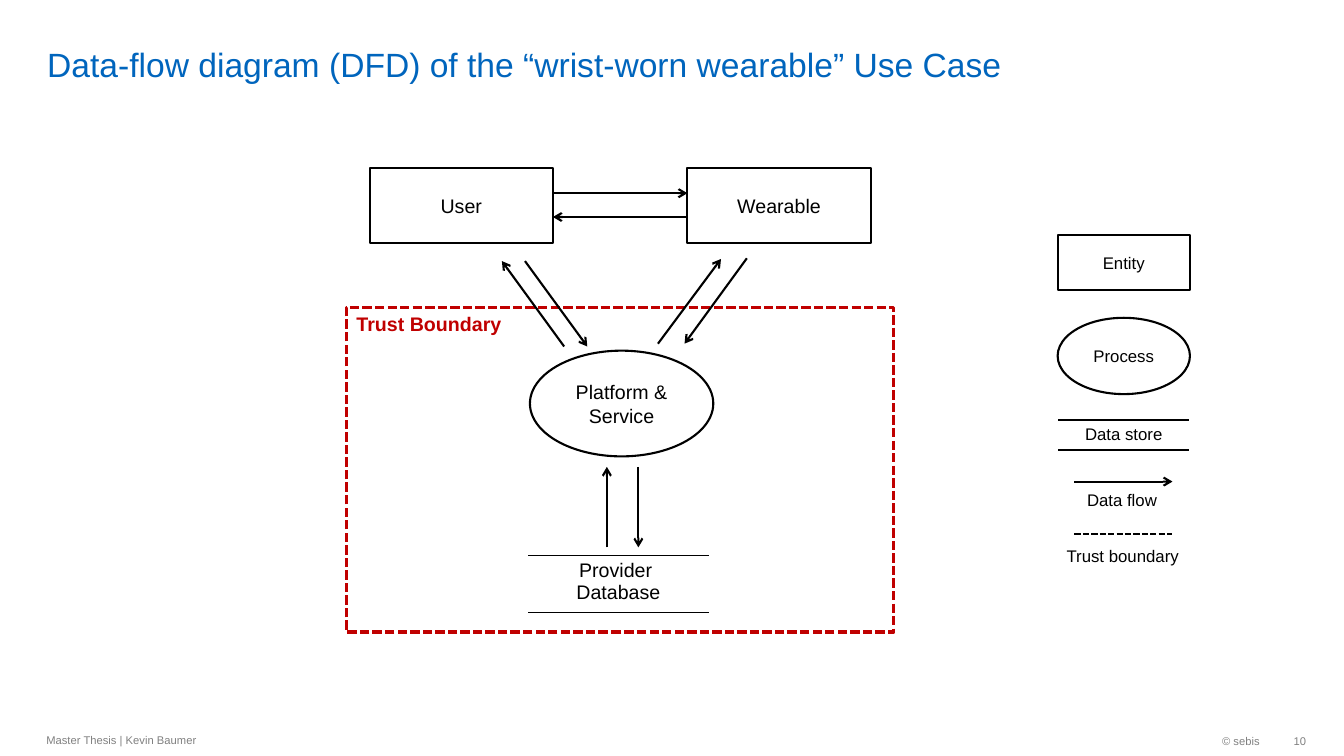
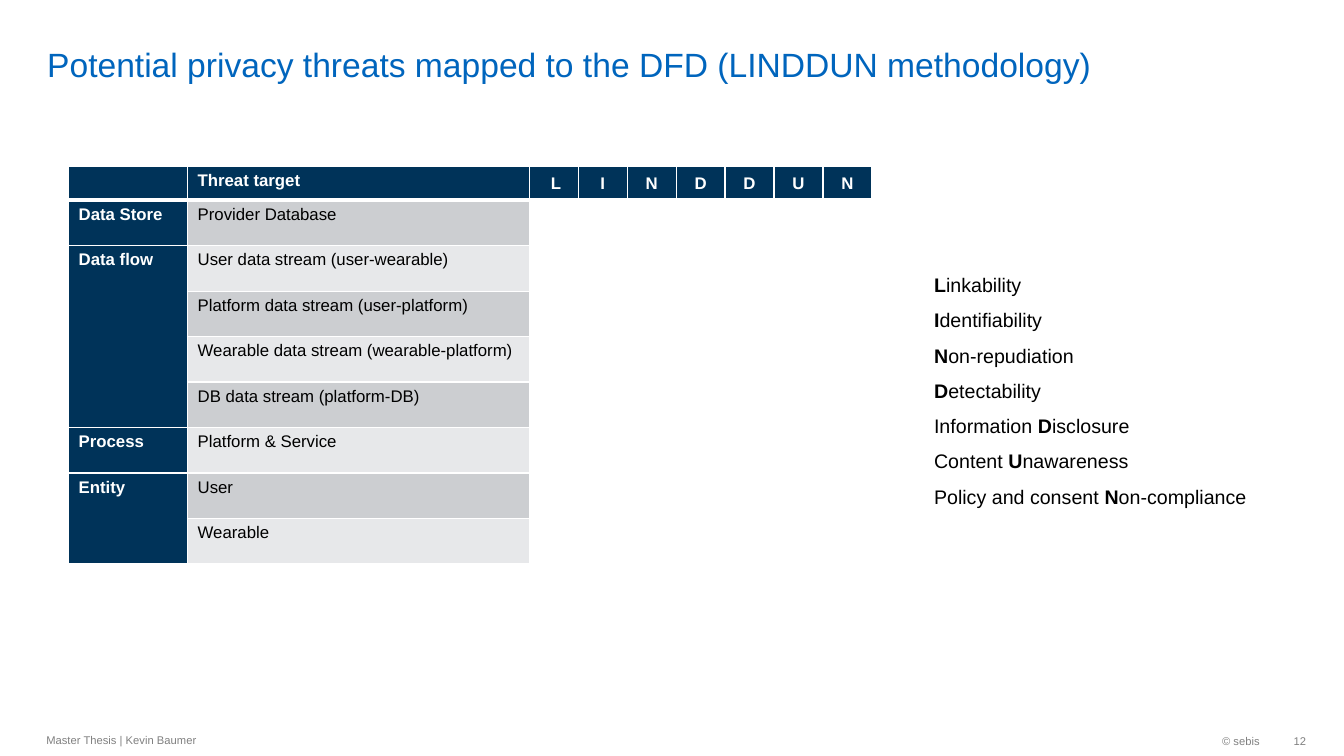
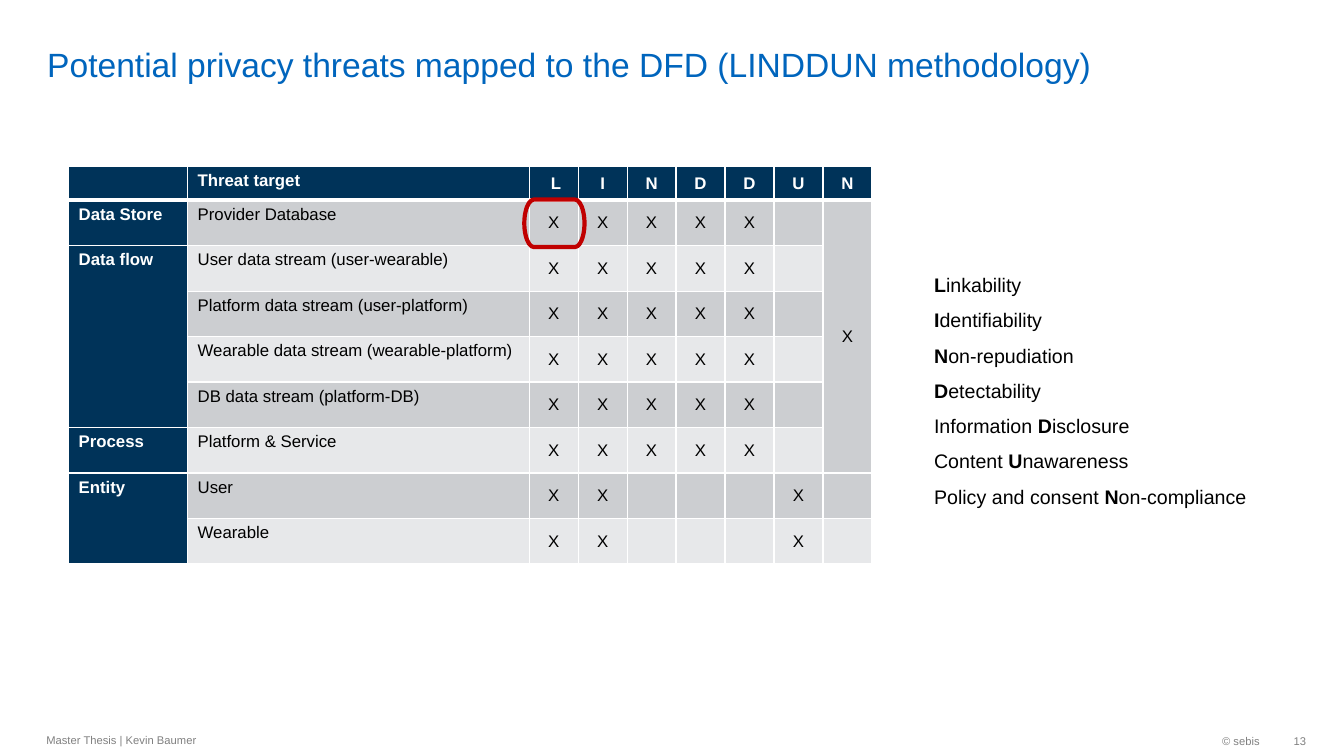
from dataclasses import dataclass

from lxml.etree import SubElement as Sub
from pptx import Presentation
from pptx.dml.color import RGBColor as RGB
from pptx.enum.dml import MSO_LINE as Dash
from pptx.enum.shapes import MSO_CONNECTOR as Conn, MSO_SHAPE as Kind
from pptx.enum.text import MSO_ANCHOR as Anchor, MSO_AUTO_SIZE as Auto, PP_ALIGN as Align
from pptx.oxml.ns import qn
from pptx.util import Emu, Pt


@dataclass(frozen=True)
class Theme:
    """Colours, type sizes and line widths."""
    font: str = "Arial"
    blue: str = "0065BD"
    navy: str = "003359"
    red: str = "C00000"
    black: str = "000000"
    white: str = "FFFFFF"
    grey: str = "808080"
    bands: tuple = ("CCCED1", "E7E8EA")
    head: int = 24
    body: int = 14
    small: int = 12
    foot: int = 8
    thin: float = 1
    line: float = 1.5
    dash: float = 2.25
    bold: float = 3


def px(num):
    """Turn px, 144 to the inch, into EMU."""
    return Emu(num * 6350)


def put(item, vals):
    """Set attributes from a dict."""
    for key, val in vals.items():
        setattr(item, key, val)


def tint(fill, color):
    """Make a fill solid, or empty without a colour."""
    if color:
        fill.solid()
        fill.fore_color.rgb = RGB.from_string(color)
    else:
        fill.background()


class Deck:
    """Holds the style and the current slide."""

    def __init__(self, theme):
        """Open an empty wide deck."""
        self.theme = theme
        self.show = Presentation()
        put(self.show, {"slide_width": px(1920), "slide_height": px(1080)})

    def page(self, title, num, layout):
        """Add a slide with its title and footer."""
        th = self.theme
        self.slide = self.show.slides.add_slide(self.show.slide_layouts[layout])
        name = self.slide.shapes.title
        self.place(name, (53, 7, 1668, 114))
        put(name.text_frame, {"margin_top": 0, "margin_bottom": 0})
        self.label(name.text_frame, [title], th.head, th.blue, anchor=Anchor.BOTTOM)
        foot = {"size": th.foot, "color": th.grey, "anchor": Anchor.MIDDLE}
        self.text("Master Thesis | Kevin Baumer", (52, 1034, 907, 46), **foot)
        self.text("© sebis", (1477, 1035, 337, 46), align=Align.RIGHT, **foot)
        page = self.text(str(num), (1814, 1035, 52, 46), align=Align.RIGHT, **foot)
        page.margin_right = 0

    def place(self, item, box):
        """Move and size a shape."""
        put(item, dict(zip(("left", "top", "width", "height"), map(px, box))))

    def label(self, frame, lines, size, color, bold=False, align=Align.LEFT, anchor=None):
        """Fill a frame; stars switch bold on and off."""
        if anchor is not None:
            put(frame, {"word_wrap": True, "auto_size": Auto.NONE, "vertical_anchor": anchor})
        for i, line in enumerate(lines):
            para = frame.add_paragraph() if i else frame.paragraphs[0]
            para.alignment = align
            if not line:
                Sub(para._p, qn("a:endParaRPr"), sz=str(size * 100))
            for j, row in enumerate(line.split("\v")):
                if j:
                    para.add_line_break()
                for k, part in enumerate(row.split("*")):
                    if part:
                        run = para.add_run()
                        run.text = part
                        put(run.font, {"name": self.theme.font, "size": Pt(size),
                                       "bold": bold or k % 2 == 1})
                        run.font.color.rgb = RGB.from_string(color)

    def text(self, text, box, size, color, **form):
        """Add a text box."""
        frame = self.slide.shapes.add_textbox(*map(px, box)).text_frame
        self.label(frame, [text], size, color, **{"anchor": Anchor.TOP, **form})
        return frame

    def items(self, lines, box):
        """Fill the body placeholder with a plain list."""
        th = self.theme
        body = self.slide.placeholders[1]
        self.place(body, box)
        self.label(body.text_frame, lines, th.body, th.black, anchor=Anchor.TOP)
        for para in body.text_frame.paragraphs:
            prop = para._p.get_or_add_pPr()
            prop.set("marL", "0")
            prop.set("indent", "0")
            Sub(prop, qn("a:buNone"))
            put(para, {"line_spacing": 1.5, "space_before": Pt(0)})

    def shape(self, kind, box, fill=None, color=None, width=None, dash=None):
        """Add an outlined shape."""
        th = self.theme
        item = self.slide.shapes.add_shape(kind, *map(px, box))
        item.shadow.inherit = False
        tint(item.fill, fill)
        tint(item.line.fill, color or th.black)
        put(item.line, {"width": Pt(width or th.line), "dash_style": dash})
        return item

    def node(self, kind, text, box, size):
        """Add a white shape with a centred label."""
        th = self.theme
        item = self.shape(kind, box, th.white)
        self.label(item.text_frame, [text], size, th.black,
                   align=Align.CENTER, anchor=Anchor.MIDDLE)

    def line(self, ends, dash=None):
        """Add a dashed line, or an arrow without a dash."""
        th = self.theme
        item = self.slide.shapes.add_connector(Conn.STRAIGHT, *map(px, ends))
        tint(item.line.fill, th.black)
        put(item.line, {"width": Pt(th.line), "dash_style": dash})
        prop = item._element.spPr
        if not dash:
            Sub(prop.find(qn("a:ln")), qn("a:tailEnd"), type="arrow")
        Sub(prop, qn("a:effectLst"))

    def table(self, spot, cols, rows):
        """Add a table without a banded style."""
        box = (*spot, sum(cols), sum(rows))
        table = self.slide.shapes.add_table(len(rows), len(cols), *map(px, box)).table
        put(table, {"first_row": False, "horz_banding": False})
        for col, size in zip(table.columns, cols):
            col.width = px(size)
        for row, size in zip(table.rows, rows):
            row.height = px(size)
        return table

    def cell(self, cell, text, size, color, fill, edges, mid=False, **form):
        """Fill a cell and draw its edges."""
        self.label(cell.text_frame, [text], size, color, **form)
        cell.vertical_anchor = Anchor.MIDDLE if mid else Anchor.TOP
        prop = cell._tc.get_or_add_tcPr()
        for side, (shade, width) in zip("LRTB", edges):
            edge = Sub(prop, qn(f"a:ln{side}"), w=str(Pt(width)))
            Sub(Sub(edge, qn("a:solidFill")), qn("a:srgbClr"), val=shade)
        tint(cell.fill, fill)

    def store(self, text, box, size, mid=False):
        """Add a data store: a label between two lines."""
        th = self.theme
        table = self.table(box[:2], box[2:3], box[3:])
        edges = [(th.white, th.thin)] * 2 + [(th.black, th.thin)] * 2
        self.cell(table.cell(0, 0), text, size, th.black, th.white, edges,
                  mid, align=Align.CENTER)

    def grid(self, spot, cols, data, marks, spans=()):
        """Add a threat table; columns from marks on are centred."""
        th = self.theme
        table = self.table(spot, cols, [48] + [65] * (len(data) - 1))
        for col, top, end in spans:
            table.cell(top, col).merge(table.cell(end, col))
        for i, row in enumerate(data):
            for j, text in enumerate(row):
                head, mark = i == 0 or j == 0 and marks > 0, j >= marks
                edges = [(th.white, th.thin)] * 3
                edges.append((th.white, th.thin if i else th.bold))
                self.cell(table.cell(i, j), text, th.small,
                          th.white if head else th.black,
                          th.navy if head else th.bands[(i - 1) % 2], edges, mark,
                          bold=head, align=Align.CENTER if mark else Align.LEFT)


TITLE = "Potential privacy threats mapped to the DFD (LINDDUN methodology)"
TERMS = ["*L*inkability", "*I*dentifiability", "*N*on-repudiation", "*D*etectability",
         "Information *D*isclosure", "Content *U*nawareness",
         "Policy and consent *N*on-compliance"]
KEYS = [" L", *"INDDUN"]
GOALS = [
    ("", "Threat target"),
    ("Data Store", "Provider Database"),
    ("Data flow", "User data stream (user-wearable)"),
    ("", "Platform data stream (user-platform)"),
    ("", "Wearable data stream (wearable-platform)"),
    ("", "DB data stream (platform-DB)"),
    ("Process", "Platform & Service"),
    ("Entity", "User"),
    ("", "Wearable"),
]
SPANS = [(0, 2, 5), (0, 7, 8)]
SPOT, COLS, SLIM = (98, 238), [170, 488], [70] * 7


def flow(deck):
    """Draw the data-flow diagram and its legend."""
    th = deck.theme
    deck.page("Data-flow diagram (DFD) of the “wrist-worn wearable” Use Case", 10, 5)
    for kind, text, box, size in (
            (Kind.RECTANGLE, "User", (528, 240, 262, 107), th.body),
            (Kind.RECTANGLE, "Wearable", (982, 240, 262, 107), th.body),
            (Kind.OVAL, "Platform & Service", (757, 501, 262, 151), th.body),
            (Kind.RECTANGLE, "Entity", (1511, 336, 189, 78), th.small),
            (Kind.OVAL, "Process", (1511, 454, 189, 109), th.small)):
        deck.node(kind, text, box, size)
    deck.store("Provider \vDatabase", (753, 793, 261, 82), th.body)
    deck.store("Data store", (1511, 600, 189, 43), th.small, True)
    zone = deck.shape(Kind.RECTANGLE, (495, 439, 782, 464), color=th.red,
                      width=th.dash, dash=Dash.SQUARE_DOT)
    deck.label(zone.text_frame, ["Trust Boundary"], th.body, th.red,
               bold=True, anchor=Anchor.TOP)
    for ends in ((790, 276, 982, 276), (982, 310, 790, 310),
                 (867, 782, 867, 667), (912, 667, 912, 782),
                 (806, 495, 717, 373), (750, 373, 839, 495),
                 (940, 491, 1030, 370), (1067, 369, 978, 491),
                 (1535, 688, 1675, 688)):
        deck.line(ends)
    deck.line((1535, 763, 1675, 763), Dash.SQUARE_DOT)
    for text, box in (("Data flow", (1531, 693, 144, 43)),
                      ("Trust boundary", (1498, 772, 212, 43))):
        deck.text(text, box, th.small, th.black, align=Align.CENTER)


def threats(deck, num):
    """Start a threat slide with its list of terms."""
    deck.page(TITLE, num, 1)
    deck.items(TERMS, (1320, 366, 549, 405))


def main():
    """Build and save the deck."""
    deck = Deck(Theme())
    flow(deck)
    threats(deck, 12)
    deck.grid(SPOT, COLS, GOALS, 2, SPANS)
    deck.grid((SPOT[0] + sum(COLS), SPOT[1]), SLIM, [KEYS], 0)
    threats(deck, 13)
    hits = [KEYS, [*"XXXXX", "", "X"]] + [[*"XXXXX", "", ""]] * 5
    hits += [["X", "X", "", "", "", "X", ""]] * 2
    data = [[*goal, *hit] for goal, hit in zip(GOALS, hits)]
    deck.grid(SPOT, COLS + SLIM, data, 2, [*SPANS, (8, 1, 6)])
    deck.shape(Kind.FLOWCHART_TERMINATOR, (749, 285, 86, 68),
               color=deck.theme.red, width=deck.theme.bold)
    deck.show.save("out.pptx")


if __name__ == "__main__":
    main()
